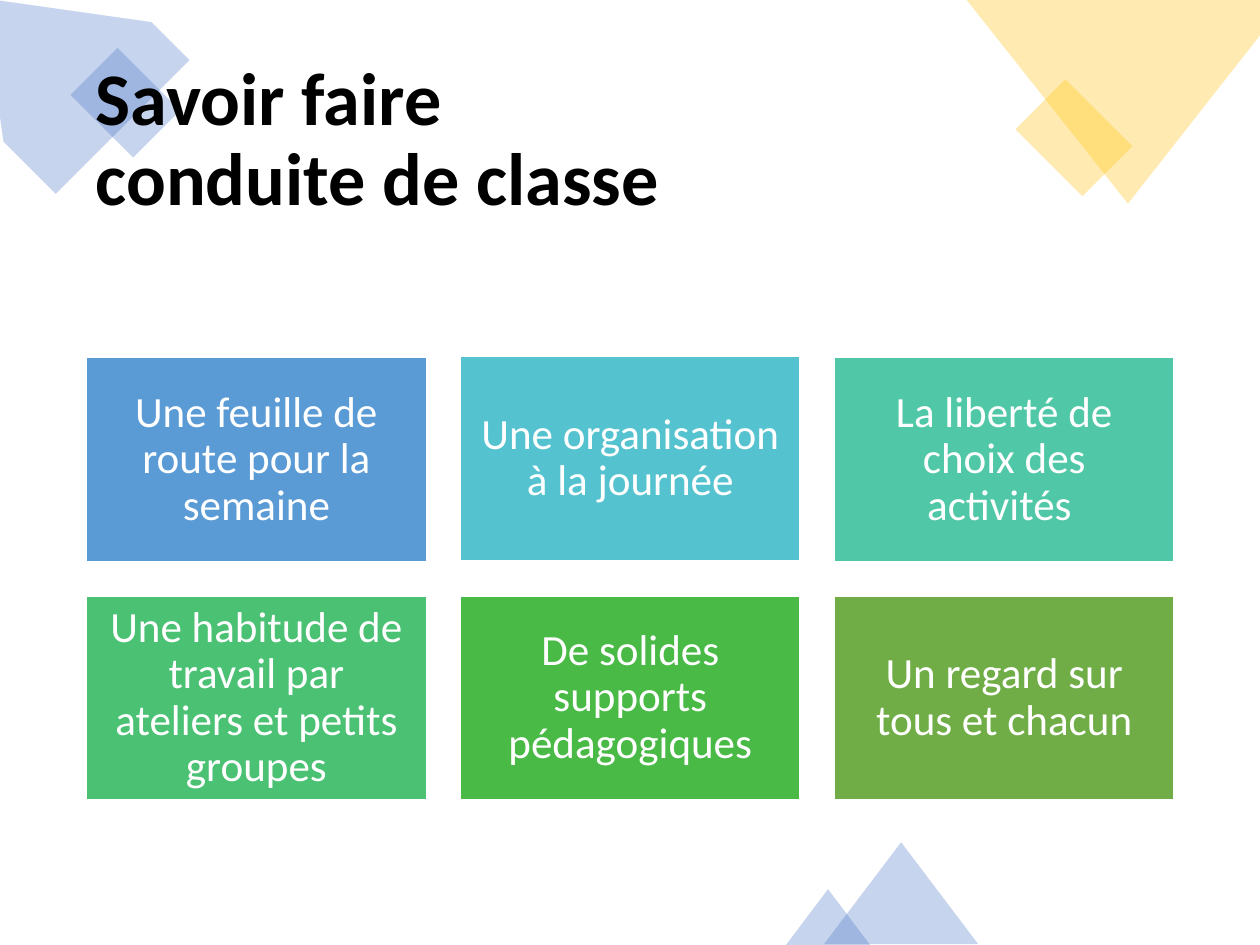
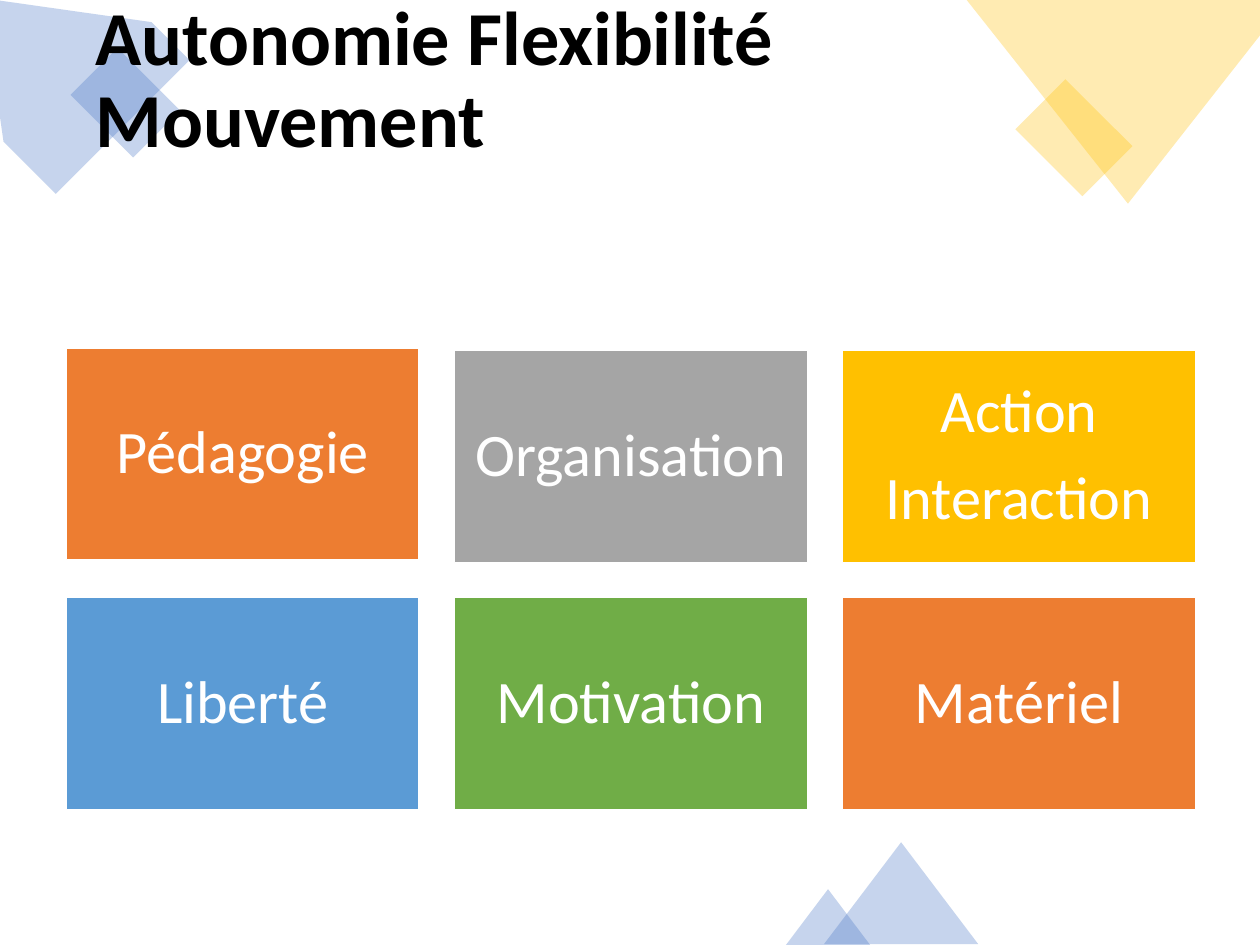
import lxml.etree
import pptx
import pptx.dml.color
import pptx.enum.shapes
import pptx.enum.text
import pptx.oxml.ns
import pptx.util
from dataclasses import dataclass

Inches = pptx.util.Inches
Pt = pptx.util.Pt
Preset = pptx.enum.shapes.MSO_SHAPE
Anchor = pptx.enum.text.MSO_ANCHOR
Align = pptx.enum.text.PP_ALIGN


@dataclass(frozen=True)
class Theme:
    font: str = "Calibri"
    ink: str = "000000"
    white: str = "FFFFFF"
    indigo: str = "4472C4"
    gold: str = "FFC000"
    blue: str = "5B9BD5"
    turquoise: str = "55C3CF"
    aqua: str = "50C8A7"
    mint: str = "4BC174"
    leaf: str = "4ABA46"
    green: str = "70AD47"
    orange: str = "ED7D31"
    grey: str = "A5A5A5"
    decor_opacity: int = 30
    title_size: float = 60.3
    large_title_size: float = 62
    card_size: float = 35
    large_card_size: float = 49
    line_spacing: float = 0.9
    paragraph_gap: float = 0.35


class Deck:
    """Holds the theme, the presentation and the slide being built."""

    def __init__(self, theme):
        self.theme = theme
        self.presentation = pptx.Presentation()
        self.presentation.slide_width = Inches(14.22)
        self.presentation.slide_height = Inches(10.67)
        self.slide = None

    def new_slide(self):
        blank = self.presentation.slide_layouts[6]
        self.slide = self.presentation.slides.add_slide(blank)
        self.decorate()

    def color(self, value):
        return pptx.dml.color.RGBColor.from_string(value)

    def paint(self, shape, fill, opacity=100):
        shape.shadow.inherit = False
        shape.fill.solid()
        shape.fill.fore_color.rgb = self.color(fill)
        shape.line.fill.background()
        if opacity < 100:
            qn = pptx.oxml.ns.qn
            tint = shape._element.spPr.find(qn("a:solidFill")).find(qn("a:srgbClr"))
            lxml.etree.SubElement(tint, qn("a:alpha")).set("val", str(opacity * 1000))

    def preset(self, kind, box, fill, opacity=100, rotation=0):
        shape = self.slide.shapes.add_shape(kind, *map(Inches, box))
        shape.rotation = rotation
        self.paint(shape, fill, opacity)
        return shape

    def polygon(self, points, fill, opacity=100):
        start, *others = [(Inches(x), Inches(y)) for x, y in points]
        outline = self.slide.shapes.build_freeform(*start, scale=1.0)
        outline.add_line_segments(others, close=True)
        self.paint(outline.convert_to_shape(), fill, opacity)

    def decorate(self):
        """Translucent corner shapes found on every slide."""
        theme, opacity = self.theme, self.theme.decor_opacity
        # Top left
        self.polygon([(1.71, 0.25), (-0.19, -0.02), (0.04, 1.6), (0.63, 2.19), (2.14, 0.68)],
                     theme.indigo, opacity)
        self.preset(Preset.RECTANGLE, (1.04, 0.66, 0.75, 1), theme.indigo, opacity, 315)
        # Top right
        self.preset(Preset.RECTANGLE, (11.72, 1.02, 0.8, 1.07), theme.gold, opacity, 315)
        self.polygon([(14.22, 0), (10.91, 0), (12.73, 2.3), (14.22, 0.4)], theme.gold, opacity)
        # Bottom
        for box in ((9.3, 9.51, 1.74, 1.15), (8.87, 10.04, 0.95, 0.63)):
            self.preset(Preset.ISOSCELES_TRIANGLE, box, theme.indigo, opacity)

    def text_run(self, paragraph, text, size, color, bold=False):
        paragraph.line_spacing = self.theme.line_spacing
        run = paragraph.add_run()
        run.text = text
        run.font.name = self.theme.font
        run.font.size = Pt(size)
        run.font.bold = bold
        run.font.color.rgb = self.color(color)

    def title(self, lines, box, size, anchor):
        frame = self.slide.shapes.add_textbox(*map(Inches, box)).text_frame
        frame.word_wrap = True
        frame.vertical_anchor = anchor
        heading = frame.paragraphs[0]
        for index, line in enumerate(lines):
            if index:
                heading.add_line_break()
            self.text_run(heading, line, size, self.theme.ink, bold=True)

    def card(self, lines, box, fill, size, inset):
        card = self.preset(Preset.RECTANGLE, box, fill)
        card.line.color.rgb = self.color(self.theme.white)
        card.line.width = Pt(1)
        frame = card.text_frame
        frame.word_wrap = True
        frame.vertical_anchor = Anchor.MIDDLE
        frame.margin_left = frame.margin_right = Inches(inset)
        frame.margin_top = frame.margin_bottom = Inches(inset)
        for index, line in enumerate(lines):
            paragraph = frame.add_paragraph() if index else frame.paragraphs[0]
            paragraph.alignment = Align.CENTER
            paragraph.space_after = Pt(size * self.theme.paragraph_gap)
            self.text_run(paragraph, line, size, self.theme.white)

    def card_grid(self, cards, origin, card_box, gap, size, inset, nudges):
        """Three columns; nudges shifts single cards vertically."""
        left, top = origin
        width, height = card_box
        for index, (lines, fill) in enumerate(cards):
            row, column = divmod(index, 3)
            x = left + column * (width + gap)
            y = top + row * (height + gap) + nudges.get(index, 0)
            self.card(lines, (x, y, width, height), fill, size, inset)


def main():
    theme = Theme()
    deck = Deck(theme)

    # Classroom management
    deck.new_slide()
    deck.title(["Savoir faire", "conduite de classe"], (0.98, 0.57, 12.27, 2.06),
               theme.title_size, Anchor.MIDDLE)
    practices = [
        (["Une feuille de route pour la semaine"], theme.blue),
        (["Une organisation à la journée"], theme.turquoise),
        (["La liberté de choix des activités "], theme.aqua),
        (["Une habitude de travail par ateliers et petits groupes"], theme.mint),
        (["De solides supports pédagogiques"], theme.leaf),
        (["Un regard sur tous et chacun"], theme.green),
    ]
    deck.card_grid(practices, (0.98, 4.04), (3.83, 2.3), 0.39,
                   theme.card_size, 0.15, {1: -0.01})

    # Autonomy, flexibility, movement
    deck.new_slide()
    deck.title(["Autonomie Flexibilité Mouvement"], (0.98, 0.45, 12.27, 1.45),
               theme.large_title_size, Anchor.BOTTOM)
    themes = [
        (["Pédagogie"], theme.orange),
        (["Organisation"], theme.grey),
        (["Action", "Interaction"], theme.gold),
        (["Liberté"], theme.blue),
        (["Motivation"], theme.green),
        (["Matériel"], theme.orange),
    ]
    deck.card_grid(themes, (0.75, 3.96), (3.98, 2.39), 0.4,
                   theme.large_card_size, 0.2, {0: -0.03})

    deck.presentation.save("out.pptx")


if __name__ == "__main__":
    main()
